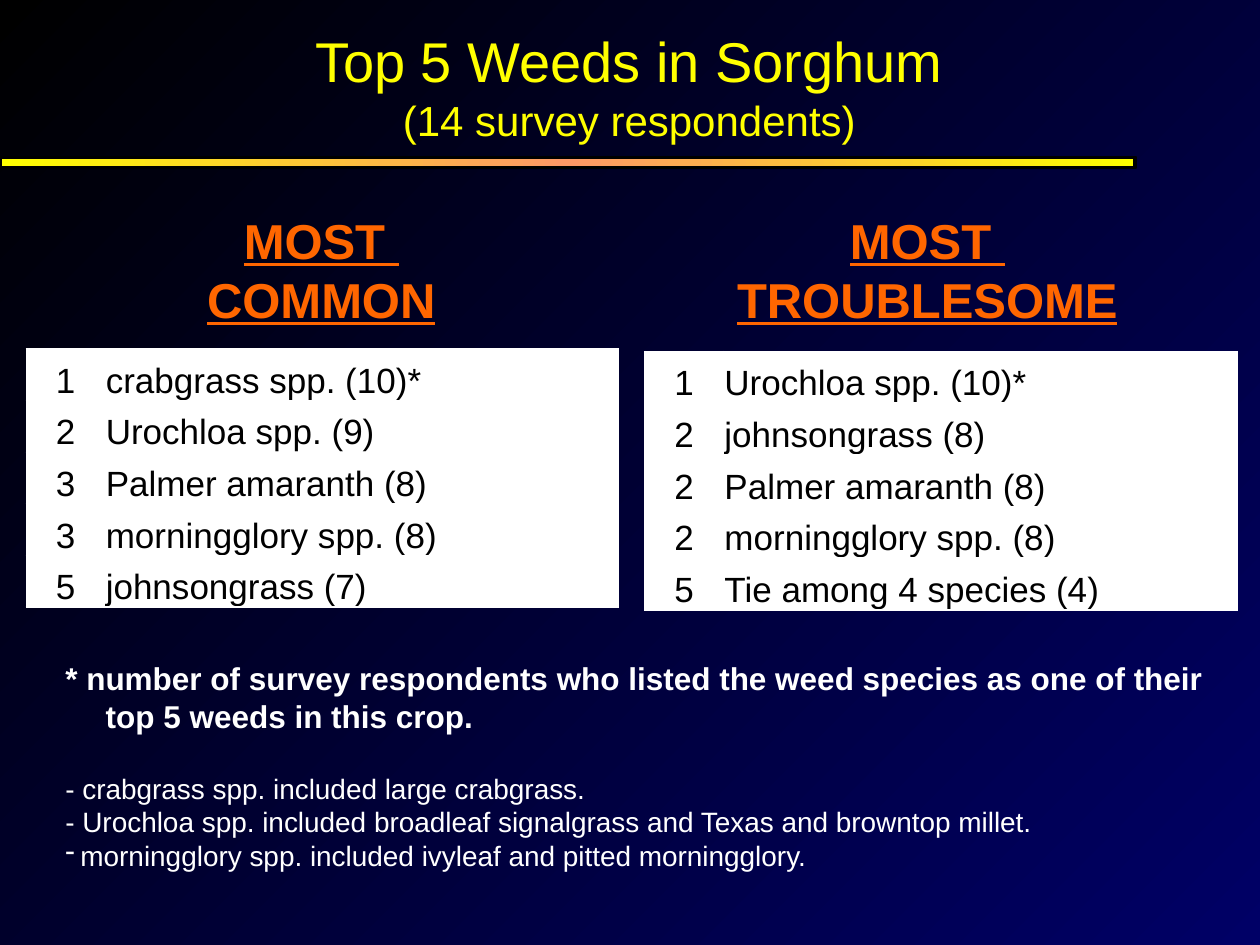
import copy

import pptx
import pptx.dml.color
import pptx.enum.shapes
import pptx.enum.text
import pptx.oxml
import pptx.oxml.ns
import pptx.util
from pptx.util import Inches

RGBColor = pptx.dml.color.RGBColor
BLACK = RGBColor(0x00, 0x00, 0x00)
NAVY = RGBColor(0x00, 0x00, 0x66)
YELLOW = RGBColor(0xFF, 0xFF, 0x00)
SALMON = RGBColor(0xFF, 0x99, 0x66)
ORANGE = RGBColor(0xFF, 0x66, 0x00)
WHITE = RGBColor(0xFF, 0xFF, 0xFF)

CENTER = pptx.enum.text.PP_ALIGN.CENTER
LEFT = pptx.enum.text.PP_ALIGN.LEFT
qn = pptx.oxml.ns.qn


def style(para, size, color, bold=False, underline=False, align=LEFT):
    para.alignment = align
    for span in para.runs:
        font = span.font
        font.name = "Arial"
        font.size = pptx.util.Pt(size)
        font.bold = bold
        font.underline = underline
        font.color.rgb = color


def add_text(page, left, top, width, height, lines):
    box = page.shapes.add_textbox(Inches(left), Inches(top), Inches(width), Inches(height))
    box.text_frame.word_wrap = True
    box.text_frame.text = "\n".join(lines)
    return box.text_frame


deck = pptx.Presentation()
deck.slide_width, deck.slide_height = Inches(10), Inches(7.5)
page = deck.slides.add_slide(deck.slide_layouts[6])

# Diagonal background gradient
backdrop = page.background.fill
backdrop.gradient()
backdrop.gradient_angle = 315
for stop, color in zip(backdrop.gradient_stops, (BLACK, NAVY)):
    stop.color.rgb = color

# Title
title = add_text(page, 0.33, 0.08, 9.33, 1.2,
                 ["Top 5 Weeds in Sorghum", "(14 survey respondents)"])
title.vertical_anchor = pptx.enum.text.MSO_ANCHOR.MIDDLE
for para, size in zip(title.paragraphs, (32, 24)):
    style(para, size, YELLOW, align=CENTER)

# Rule under the title, with a three-stop gradient
rule = page.shapes.add_shape(pptx.enum.shapes.MSO_SHAPE.RECTANGLE,
                             Inches(0), Inches(1.25), Inches(9.01), Inches(0.08))
rule.shadow.inherit = False
rule.line.color.rgb = BLACK
rule.line.width = pptx.util.Pt(2.25)
rule.fill.gradient()
rule.fill.gradient_angle = 0
stop_list = rule.fill._xPr.find(qn("a:gradFill")).find(qn("a:gsLst"))
stop_list.append(copy.deepcopy(stop_list[0]))
for stop, position, color in zip(rule.fill.gradient_stops, (0, 0.5, 1),
                                 (YELLOW, SALMON, YELLOW)):
    stop.position = position
    stop.color.rgb = color

# Column headings, each with its ranked table
rankings = [
    ("COMMON", 1.35, 2.4, 0.21, 2.77, [
        ("1", "crabgrass spp. (10)*"),
        ("2", "Urochloa spp. (9)"),
        ("3", "Palmer amaranth (8)"),
        ("3", "morningglory spp. (8)"),
        ("5", "johnsongrass (7)"),
    ]),
    ("TROUBLESOME", 5.73, 3.26, 5.12, 2.79, [
        ("1", "Urochloa spp. (10)*"),
        ("2", "johnsongrass (8)"),
        ("2", "Palmer amaranth (8)"),
        ("2", "morningglory spp. (8)"),
        ("5", "Tie among 4 species (4)"),
    ]),
]
for heading, heading_left, heading_width, left, top, weeds in rankings:
    frame = add_text(page, heading_left, 1.62, heading_width, 1.04, ["MOST ", heading])
    for para in frame.paragraphs:
        style(para, 28, ORANGE, bold=True, underline=True, align=CENTER)

    table = page.shapes.add_table(len(weeds), 2, Inches(left), Inches(top),
                                  Inches(4.7), Inches(2.05)).table
    table.columns[0].width = Inches(0.62)
    table.columns[1].width = Inches(4.08)
    for row, weed in zip(table.rows, weeds):
        row.height = Inches(0.41)
        for cell, text, align in zip(row.cells, weed, (CENTER, LEFT)):
            cell.text_frame.text = text
            style(cell.text_frame.paragraphs[0], 20, BLACK, align=align)
            cell.vertical_anchor = pptx.enum.text.MSO_ANCHOR.BOTTOM
            cell.margin_left = cell.margin_right = cell.margin_top = Inches(0.01)
            cell.margin_bottom = 0
            properties = cell._tc.get_or_add_tcPr()
            for side in ("lnL", "lnR", "lnT", "lnB"):
                properties.append(pptx.oxml.parse_xml(
                    f'<a:{side} {pptx.oxml.ns.nsdecls("a")} w="12700"><a:solidFill>'
                    f'<a:srgbClr val="{WHITE}"/></a:solidFill></a:{side}>'))
            cell.fill.solid()
            cell.fill.fore_color.rgb = WHITE

# Footnotes
notes = add_text(page, 0.42, 5.18, 9.25, 1.82, [
    "* number of survey respondents who listed the weed species as one of their "
    "top 5 weeds in this crop.",
    "- crabgrass spp. included large crabgrass.",
    "- Urochloa spp. included broadleaf signalgrass and Texas and browntop millet.",
    "morningglory spp. included ivyleaf and pitted morningglory.",
])
footnote, *remarks = notes.paragraphs
style(footnote, 18, WHITE, bold=True)
for para in remarks:
    style(para, 16, WHITE)
remarks[0].space_before = pptx.util.Pt(21)

# Hanging indents, and a dash bullet on the last remark
for para, indent in ((footnote, 0.32), (remarks[-1], 0.12)):
    properties = para._p.get_or_add_pPr()
    properties.set("marL", str(Inches(indent)))
    properties.set("indent", str(-Inches(indent)))
properties.append(pptx.oxml.parse_xml(
    f'<a:buChar {pptx.oxml.ns.nsdecls("a")} char="-"/>'))

deck.save("out.pptx")
